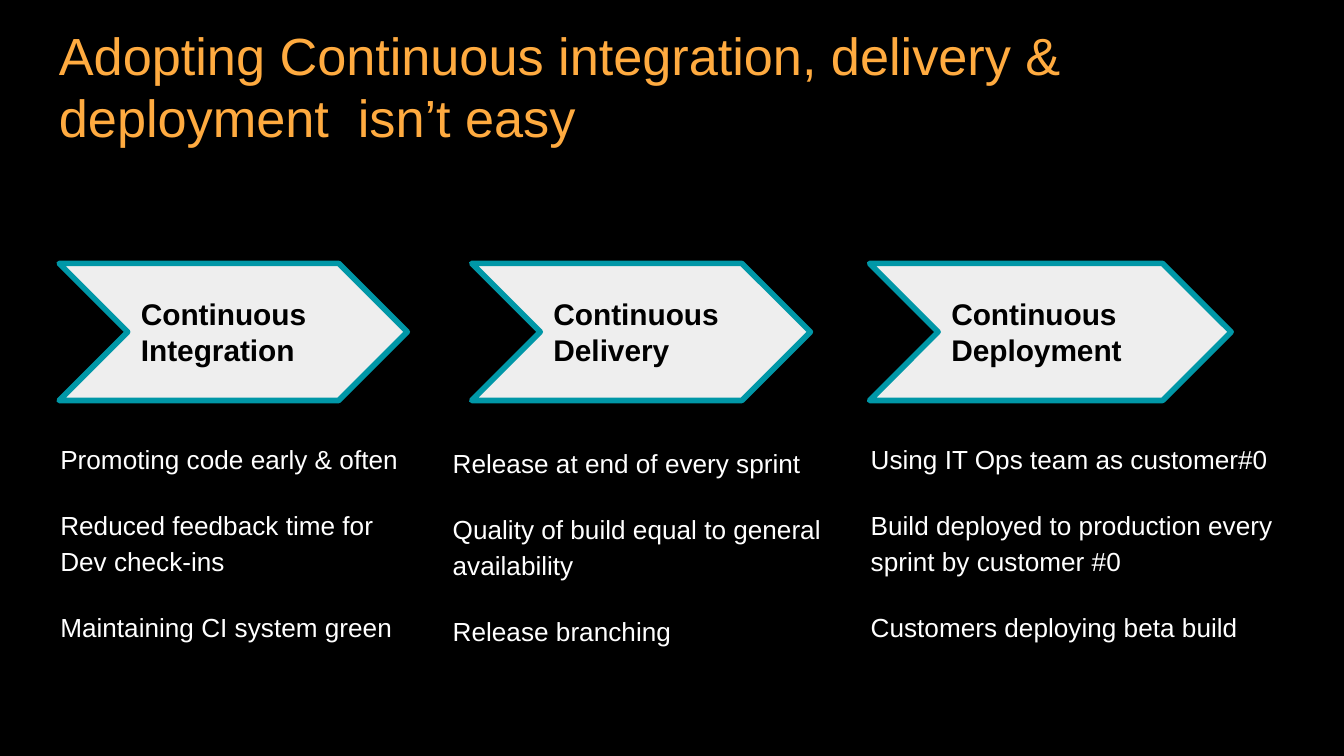
"""Build the slide on continuous integration, delivery and deployment."""
from lxml import etree
from pptx import Presentation
from pptx.dml.color import RGBColor
from pptx.enum.shapes import MSO_SHAPE
from pptx.enum.text import MSO_ANCHOR, PP_ALIGN
from pptx.oxml.ns import qn
from pptx.util import Inches, Pt

CHEVRON = MSO_SHAPE.CHEVRON
RECTANGLE = MSO_SHAPE.RECTANGLE
LEFT = PP_ALIGN.LEFT
TOP = MSO_ANCHOR.TOP
MIDDLE = MSO_ANCHOR.MIDDLE

BLACK, WHITE = "000000", "FFFFFF"
ORANGE, TEAL, PALE = "FFAB40", "0097A7", "EEEEEE"

SLIDE_WIDTH = 10
SLIDE_HEIGHT = SLIDE_WIDTH * 9 / 16
TITLE = "Adopting Continuous integration, delivery & deployment  isn’t easy"
CHEVRON_TOP, CHEVRON_HEIGHT = 1.96, 1.02
STAGES = [
    ("Continuous Integration", 0.44, 2.59, (0.35, 3.04, 2.91, 1.97), BLACK,
     ["Promoting code early & often",
      "Reduced feedback time for Dev check-ins",
      "Maintaining CI system green"]),
    ("Continuous Delivery", 3.51, 2.52, (3.27, 3.14, 3, 1.82), None,
     ["Release at end of every sprint",
      "Quality of build equal to general availability",
      "Release branching"]),
    ("Continuous Deployment", 6.47, 2.69, (6.38, 3.04, 3.28, 1.97), None,
     ["Using IT Ops team as customer#0",
      "Build deployed to production every sprint by customer #0",
      "Customers deploying beta build"]),
]


def color(value):
    return RGBColor.from_string(value)


def write(frame, texts, *, size, ink, bold=False, anchor=MIDDLE, spacing=None, gap=0):
    frame.word_wrap = True
    frame.vertical_anchor = anchor
    frame.margin_left = frame.margin_right = Inches(0.1)
    frame.margin_top = frame.margin_bottom = Inches(0.1)
    for index, text in enumerate(texts):
        paragraph = frame.add_paragraph() if index else frame.paragraphs[0]
        paragraph.alignment = LEFT
        paragraph.line_spacing = spacing
        paragraph.space_before = Pt(gap if index else 0)
        run = paragraph.add_run()
        run.text = text
        run.font.name = "Arial"
        run.font.size = Pt(size)
        run.font.bold = bold
        run.font.color.rgb = color(ink)


class SlideBuilder:
    def __init__(self, slide, background):
        self.slide = slide
        slide.background.fill.solid()
        slide.background.fill.fore_color.rgb = color(background)

    def text(self, box, texts, **style):
        shape = self.slide.shapes.add_textbox(*map(Inches, box))
        write(shape.text_frame, texts, **style)

    def shape(self, kind, box, texts, fill, outline=None, **style):
        shape = self.slide.shapes.add_shape(kind, *map(Inches, box))
        shape.shadow.inherit = False
        shape.fill.solid()
        shape.fill.fore_color.rgb = color(fill)
        if outline:
            shape.line.color.rgb = color(outline)
            shape.line.width = Pt(3)
            etree.SubElement(shape.element.spPr.find(qn("a:ln")), qn("a:round"))
        else:
            shape.line.fill.background()
        write(shape.text_frame, texts, **style)

    def stage(self, name, left, width):
        box = (left, CHEVRON_TOP, width, CHEVRON_HEIGHT)
        self.shape(CHEVRON, box, [name], PALE, TEAL, size=16, ink=BLACK, bold=True)

    def details(self, box, fill, texts):
        style = dict(size=14, ink=WHITE, spacing=1.15, gap=16)
        if fill:
            self.shape(RECTANGLE, box, texts, fill, **style)
        else:
            self.text(box, texts, **style)


def main():
    presentation = Presentation()
    presentation.slide_width = Inches(SLIDE_WIDTH)
    presentation.slide_height = Inches(SLIDE_HEIGHT)
    slide = presentation.slides.add_slide(presentation.slide_layouts[6])
    builder = SlideBuilder(slide, BLACK)
    builder.text((0.34, 0.07, 9.32, 0.63), [TITLE], size=28, ink=ORANGE, anchor=TOP)
    for name, left, width, box, fill, texts in STAGES:
        builder.stage(name, left, width)
        builder.details(box, fill, texts)
    presentation.save("out.pptx")


if __name__ == "__main__":
    main()
